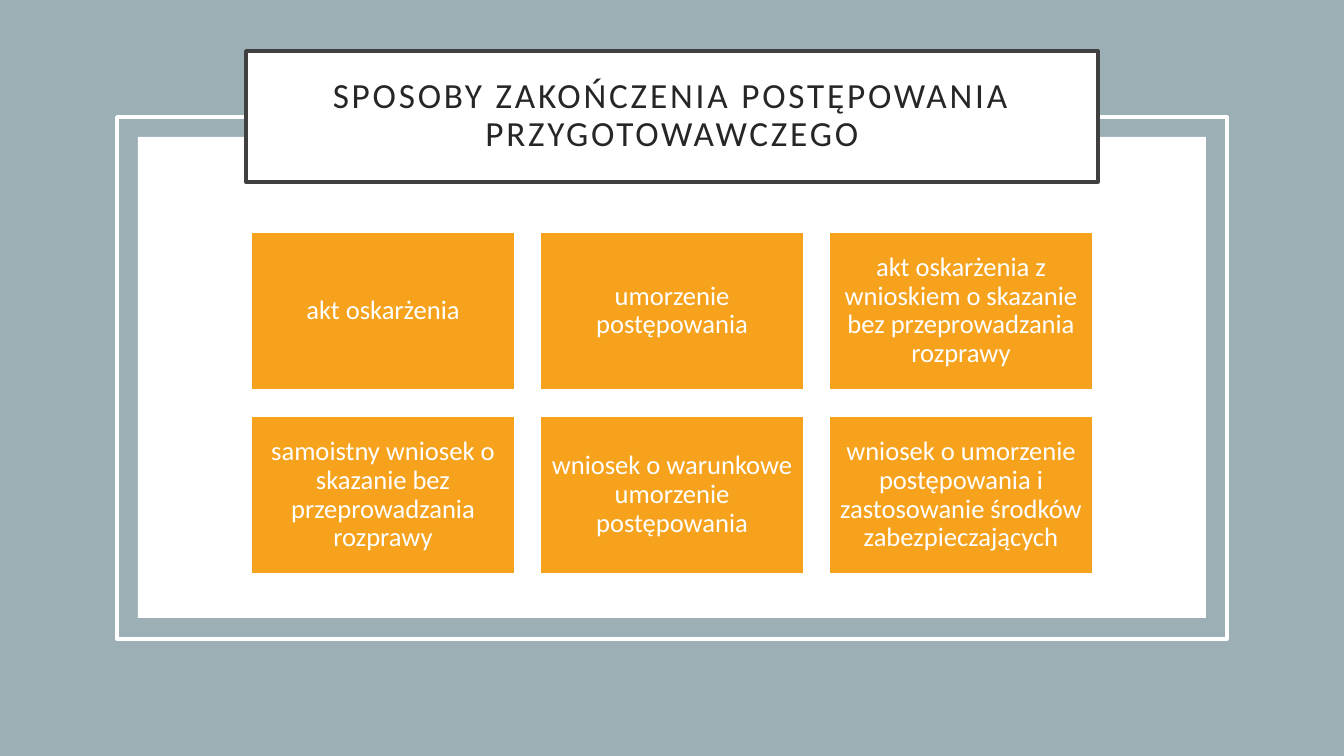
import pptx
import pptx.util
import pptx.dml.color
import pptx.enum.shapes
import pptx.enum.text

# Content
TITLE = "SPOSOBY ZAKOŃCZENIA POSTĘPOWANIA PRZYGOTOWAWCZEGO"
WAYS = [
    "akt oskarżenia",
    "umorzenie postępowania",
    "akt oskarżenia z wnioskiem o skazanie bez przeprowadzania rozprawy",
    "samoistny wniosek o skazanie bez przeprowadzania rozprawy",
    "wniosek o warunkowe umorzenie postępowania",
    "wniosek o umorzenie postępowania i zastosowanie środków zabezpieczających",
]

# Theme and layout, lengths in px
THEME = {
    "font": "Calibri", "back": "9BAFB5", "white": "FFFFFF", "edge": "404040",
    "ink": "262626", "tile": "F6A21D", "title": 25.2, "body": 19,
}
WIDE, HIGH = 1344, 756
PANEL = (138, 137, 1068, 481)
FRAME = (117, 117, 1110, 522)
HEAD = (246, 51, 852, 131)
COLS, TILE_W, TILE_H, GAP, TOP = 3, 263, 158, 26, 232


def px(num):
    return pptx.util.Emu(round(num * 914400 / 100.8))


def color(name):
    return pptx.dml.color.RGBColor.from_string(THEME[name])


def add_box(slide, area, fill=None, line=None, width=1):
    box = slide.shapes.add_shape(
        pptx.enum.shapes.MSO_SHAPE.RECTANGLE, *map(px, area))
    box.shadow.inherit = False
    if fill:
        box.fill.solid()
        box.fill.fore_color.rgb = color(fill)
    else:
        box.fill.background()
    if line:
        box.line.color.rgb = color(line)
        box.line.width = pptx.util.Pt(width)
    else:
        box.line.fill.background()
    return box


def put_text(box, text, size, ink, inset, track=0):
    frame = box.text_frame
    frame.word_wrap = True
    frame.vertical_anchor = pptx.enum.text.MSO_ANCHOR.MIDDLE
    frame.margin_left = frame.margin_right = px(inset)
    frame.margin_top = frame.margin_bottom = px(inset)
    para = frame.paragraphs[0]
    para.alignment = pptx.enum.text.PP_ALIGN.CENTER
    para.line_spacing = 0.9
    run = para.add_run()
    run.text = text
    run.font.name = THEME["font"]
    run.font.size = pptx.util.Pt(THEME[size])
    run.font.color.rgb = color(ink)
    if track:
        run._r.get_or_add_rPr().set("spc", str(track * 100))


def main():
    deck = pptx.Presentation()
    deck.slide_width, deck.slide_height = px(WIDE), px(HIGH)
    slide = deck.slides.add_slide(deck.slide_layouts[6])

    # Backdrop
    slide.background.fill.solid()
    slide.background.fill.fore_color.rgb = color("back")
    add_box(slide, PANEL, fill="white")
    add_box(slide, FRAME, line="white", width=2.5)

    # Title
    head = add_box(slide, HEAD, fill="white", line="edge", width=2.5)
    put_text(head, TITLE, "title", "ink", inset=20, track=2)

    # Tile grid, centred across the slide
    left = (WIDE - COLS * TILE_W - (COLS - 1) * GAP) / 2
    for i, way in enumerate(WAYS):
        row, col = divmod(i, COLS)
        area = (left + col * (TILE_W + GAP), TOP + row * (TILE_H + GAP),
                TILE_W, TILE_H)
        tile = add_box(slide, area, fill="tile", line="white")
        put_text(tile, way, "body", "white", inset=8)

    deck.save("out.pptx")


if __name__ == "__main__":
    main()
